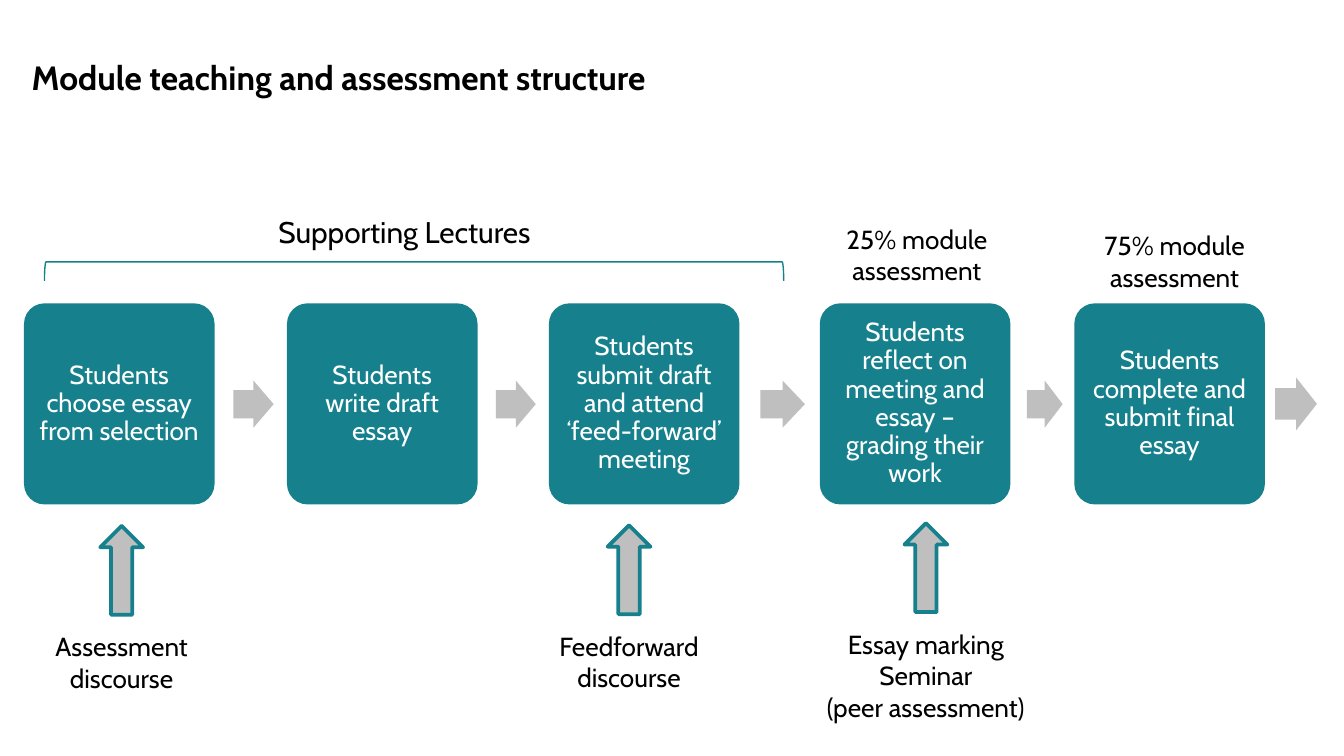
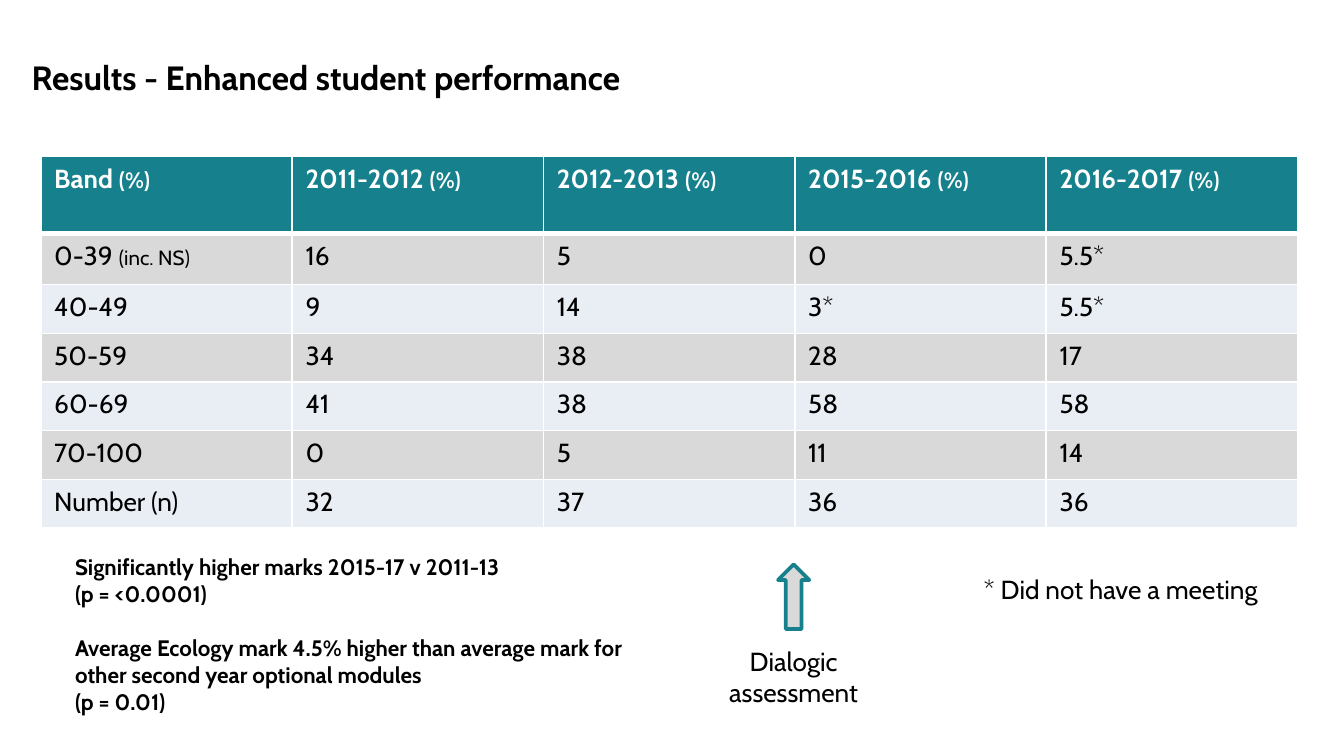
from dataclasses import dataclass

from lxml.etree import SubElement
from pptx import Presentation
from pptx.dml.color import RGBColor
from pptx.enum.shapes import MSO_SHAPE
from pptx.enum.text import MSO_ANCHOR, PP_ALIGN
from pptx.oxml.ns import qn
from pptx.util import Cm, Pt

FONT = "Cabin"
TEAL = "16818D"
GREY = "BFBFBF"
PALE_GREY = "D9D9D9"
PALE_BLUE = "E9EDF4"
BLACK = "000000"
WHITE = "FFFFFF"

STEPS = [
    (0, "Students choose essay from selection"),
    (4.97, "Students write draft essay"),
    (9.92, "Students submit draft and attend ‘feed-forward’ meeting"),
    (15.04, "Students reflect on meeting and essay – grading their work"),
    (19.85, "Students complete and submit final essay"),
]
STEP_WIDTH = 3.53

YEARS = ["2011-2012", "2012-2013", "2015-2016", "2016-2017"]
MARKS = [
    ["0-39", "16", "5", "0", "5.5*"],
    ["40-49", "9", "14", "3*", "5.5*"],
    ["50-59", "34", "38", "28", "17"],
    ["60-69", "41", "38", "58", "58"],
    ["70-100", "0", "5", "11", "14"],
    ["Number (n)", "32", "37", "36", "36"],
]


@dataclass
class Box:
    left: float
    top: float
    width: float
    height: float

    def lengths(self):
        return Cm(self.left), Cm(self.top), Cm(self.width), Cm(self.height)


def color(hex_code):
    return RGBColor.from_string(hex_code)


def add_run(paragraph, words, size, ink=BLACK, bold=False):
    run = paragraph.add_run()
    run.text = words
    run.font.name = FONT
    run.font.size = Pt(size)
    run.font.bold = bold
    run.font.color.rgb = color(ink)


def write_lines(frame, lines, size, ink=BLACK, bold=False, align=PP_ALIGN.CENTER):
    frame.word_wrap = True
    for index, words in enumerate(lines):
        paragraph = frame.add_paragraph() if index else frame.paragraphs[0]
        paragraph.alignment = align
        add_run(paragraph, words, size, ink, bold)


def set_margins(frame, margin):
    frame.margin_left = frame.margin_right = Cm(margin)
    frame.margin_top = frame.margin_bottom = Cm(margin)


def add_label(slide, box, lines, size=14, **style):
    label = slide.shapes.add_textbox(*box.lengths())
    write_lines(label.text_frame, lines, size, **style)
    return label.text_frame


def add_figure(slide, preset, box, fill=None, line=None, line_width=2):
    figure = slide.shapes.add_shape(preset, *box.lengths())
    figure.shadow.inherit = False
    if fill:
        figure.fill.solid()
        figure.fill.fore_color.rgb = color(fill)
    else:
        figure.fill.background()
    if line:
        figure.line.color.rgb = color(line)
        figure.line.width = Pt(line_width)
    else:
        figure.line.fill.background()
    return figure


def add_titled_slide(deck, heading):
    slide = deck.slides.add_slide(deck.slide_layouts[5])
    slide.background.fill.solid()
    slide.background.fill.fore_color.rgb = color(WHITE)
    title = slide.shapes.title
    title.left, title.top, title.width, title.height = Box(0.6, 0.36, 24, 1.35).lengths()
    frame = title.text_frame
    frame.vertical_anchor = MSO_ANCHOR.TOP
    set_margins(frame, 0)
    write_lines(frame, [heading], 18, bold=True, align=PP_ALIGN.LEFT)
    frame.paragraphs[0].line_spacing = Pt(42)
    return slide


def add_next_arrow(slide, box):
    arrow = add_figure(slide, MSO_SHAPE.RIGHT_ARROW, box, GREY)
    arrow.adjustments[0] = 0.6


def add_step(slide, box, words):
    step = add_figure(slide, MSO_SHAPE.ROUNDED_RECTANGLE, box, TEAL, TEAL)
    step.adjustments[0] = 0.1
    frame = step.text_frame
    frame.vertical_anchor = MSO_ANCHOR.MIDDLE
    set_margins(frame, 0.15)
    write_lines(frame, [words], 14, WHITE)
    frame.paragraphs[0].line_spacing = 0.9


def add_process(slide, box):
    middle = box.top + box.height / 2
    for index, (offset, words) in enumerate(STEPS):
        left = box.left + offset
        add_step(slide, Box(left, box.top, STEP_WIDTH, box.height), words)
        if index + 1 < len(STEPS):
            gap = STEPS[index + 1][0] - offset - STEP_WIDTH
            arrow_left = left + STEP_WIDTH + 0.27 * gap
            add_next_arrow(slide, Box(arrow_left, middle - 0.44, 0.53 * gap, 0.89))
    add_next_arrow(slide, Box(box.left + box.width - 0.79, middle - 0.5, 0.79, 1))


def add_cue(slide, box, lines, arrow_width=0.81, arrow_height=1.68, fill=GREY):
    arrow_left = box.left + (box.width - arrow_width) / 2
    arrow = Box(arrow_left, box.top, arrow_width, arrow_height)
    add_figure(slide, MSO_SHAPE.UP_ARROW, arrow, fill, TEAL)
    drop = arrow_height + 0.18
    add_label(slide, Box(box.left, box.top + drop, box.width, box.height - drop), lines)


def add_lecture_span(slide, box):
    depth = 0.36
    middle = box.left + box.width / 2
    bracket_center = box.top + box.height - depth / 2
    bracket = Box(middle - depth / 2, bracket_center - box.width / 2, depth, box.width)
    span = add_figure(slide, MSO_SHAPE.LEFT_BRACKET, bracket, line=TEAL, line_width=0.75)
    span.rotation = 90
    add_label(slide, Box(middle - 6.63 - 0.18, box.top, 13.26, 0.94), ["Supporting Lectures"], 16)


def build_structure(deck):
    slide = add_titled_slide(deck, "Module teaching and assessment structure")
    add_process(slide, Box(0.49, 5.77, 24.4, 3.73))
    add_cue(slide, Box(0.18, 9.94, 4.24, 3.31), ["Assessment discourse"])
    add_cue(slide, Box(8.97, 9.93, 5.84, 3.31), ["Feedforward", "discourse"])
    add_cue(slide, Box(14.58, 9.89, 5.84, 3.92),
            ["Essay marking", "Seminar", "(peer assessment)"])
    add_lecture_span(slide, Box(0.84, 3.91, 13.97, 1.4))
    add_label(slide, Box(14.94, 4.09, 4.78, 1.45), ["25% module assessment"])
    add_label(slide, Box(19.81, 4.22, 4.78, 1.45), ["75% module assessment"])


def set_borders(cell, bottom_width):
    properties = cell._tc.get_or_add_tcPr()
    widths = {"a:lnL": 1, "a:lnR": 1, "a:lnT": 1, "a:lnB": bottom_width}
    for position, (tag, width) in enumerate(widths.items()):
        border = SubElement(properties, qn(tag), w=str(Pt(width)))
        solid = SubElement(border, qn("a:solidFill"))
        SubElement(solid, qn("a:srgbClr"), val=WHITE)
        properties.insert(position, border)


def fill_cell(cell, runs, fill, bottom_width=1):
    cell.fill.solid()
    cell.fill.fore_color.rgb = color(fill)
    set_borders(cell, bottom_width)
    for words, size, ink, bold in runs:
        add_run(cell.text_frame.paragraphs[0], words, size, ink, bold)


def add_marks_table(slide, box):
    table = slide.shapes.add_table(len(MARKS) + 1, len(YEARS) + 1, *box.lengths()).table
    for column in table.columns:
        column.width = Cm(box.width / (len(YEARS) + 1))
    for row, height in zip(table.rows, [1.45, 0.97] + [0.92] * 5):
        row.height = Cm(height)
    for index, heading in enumerate(["Band"] + YEARS):
        runs = [(heading + " ", 14, WHITE, True), ("(%)", 12, WHITE, True)]
        fill_cell(table.cell(0, index), runs, TEAL, 3)
    for row_index, marks in enumerate(MARKS, 1):
        fill = PALE_GREY if row_index % 2 else PALE_BLUE
        for index, mark in enumerate(marks):
            runs = [(mark, 14, BLACK, False)]
            if mark == "0-39":
                runs = [("0-39 ", 14, BLACK, False), ("(inc. NS)", 11, BLACK, False)]
            fill_cell(table.cell(row_index, index), runs, fill)


def add_findings(slide, box):
    findings = [
        "Significantly higher marks 2015-17 v 2011-13",
        "(p = <0.0001)",
        "Average Ecology mark 4.5% higher than average mark for other second year optional modules",
        "(p = 0.01)",
    ]
    frame = add_label(slide, box, findings, 12, bold=True, align=PP_ALIGN.LEFT)
    frame.paragraphs[2].space_before = Pt(14.5)


def build_results(deck):
    slide = add_titled_slide(deck, "Results - Enhanced student performance")
    add_marks_table(slide, Box(0.77, 2.96, 23.75, 7.02))
    add_findings(slide, Box(1.17, 10.34, 11.6, 3.6))
    add_cue(slide, Box(12.8, 10.67, 4.4, 2.8), ["Dialogic assessment"], 0.59, 1.22, PALE_GREY)
    add_label(slide, Box(18.34, 10.72, 7.06, 0.86), ["* Did not have a meeting"],
              align=PP_ALIGN.LEFT)


def main():
    deck = Presentation()
    deck.slide_width = Cm(25.4)
    deck.slide_height = Cm(14.29)
    build_structure(deck)
    build_results(deck)
    deck.save("out.pptx")


if __name__ == "__main__":
    main()
